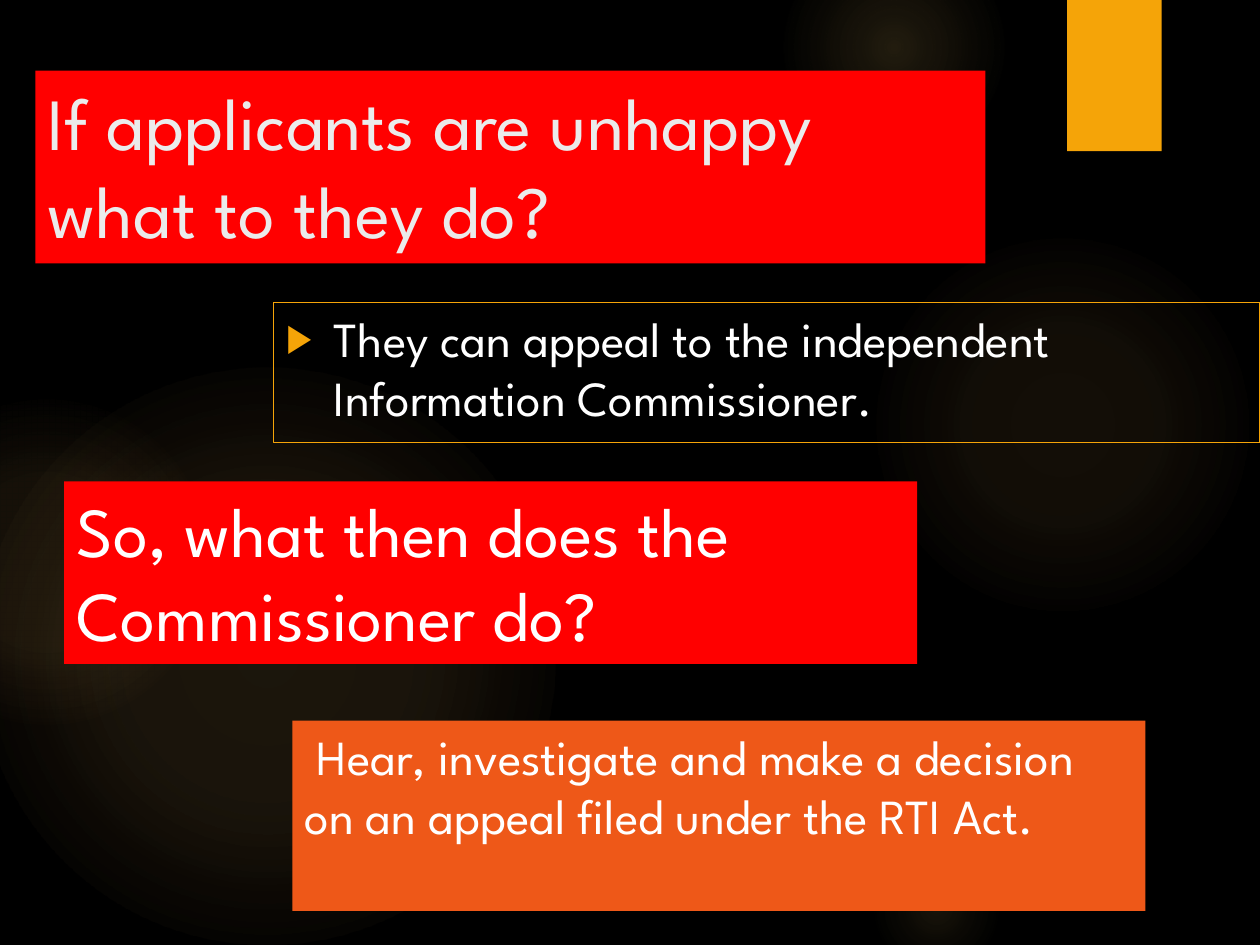
from lxml.etree import SubElement
from pptx import Presentation
from pptx.dml.color import RGBColor
from pptx.enum.shapes import MSO_SHAPE
from pptx.enum.text import MSO_ANCHOR, MSO_AUTO_SIZE, PP_ALIGN
from pptx.oxml import parse_xml
from pptx.oxml.ns import nsdecls, qn
from pptx.util import Inches, Pt

FONT = "League Spartan"
COLORS = {
    "background": "000000",
    "glow": "FAC96A",
    "accent": "F5A408",
    "question": "FF0000",
    "answer": "EE5818",
    "title": "EBEBEB",
    "text": "FFFFFF",
}

# Left, top, diameter in inches, then (position, opacity) stops in percent
GLOWS = [
    (6.89, 1.83, 3.08, [(0, 7), (36, 6), (69, 0)]),
    (6.22, -0.5, 1.75, [(0, 14), (36, 7), (73, 0)]),
    (6.89, 6.67, 1.08, [(0, 10), (31, 5), (66, 0)]),
    (-0.17, 2.92, 4.58, [(0, 11), (36, 10), (75, 0)]),
    (-0.92, 3.17, 2.58, [(0, 8), (36, 8), (72, 0)]),
]


def color(name):
    return RGBColor.from_string(COLORS[name])


def place(shape, box):
    shape.left, shape.top, shape.width, shape.height = map(Inches, box)


def add_plain_shape(slide, kind, box):
    shape = slide.shapes.add_shape(kind, *map(Inches, box))
    shape.shadow.inherit = False
    shape.line.fill.background()
    return shape


def fill_solid(shape, name):
    shape.fill.solid()
    shape.fill.fore_color.rgb = color(name)


def add_glow(slide, box, stops):
    """Add a circle whose light fades out from its centre."""
    glow = add_plain_shape(slide, MSO_SHAPE.OVAL, box)
    stop_xml = "".join(
        f'<a:gs pos="{position * 1000}"><a:srgbClr val="{COLORS["glow"]}">'
        f'<a:alpha val="{opacity * 1000}"/></a:srgbClr></a:gs>'
        for position, opacity in stops
    )
    gradient = parse_xml(
        f'<a:gradFill {nsdecls("a")} rotWithShape="1"><a:gsLst>{stop_xml}</a:gsLst>'
        '<a:path path="circle"><a:fillToRect l="50000" t="50000" r="50000" b="50000"/>'
        "</a:path></a:gradFill>"
    )
    glow._element.spPr.find(qn("a:prstGeom")).addnext(gradient)


def add_backdrop(slide):
    slide.background.fill.solid()
    slide.background.fill.fore_color.rgb = color("background")
    for left, top, diameter, stops in GLOWS:
        add_glow(slide, (left, top, diameter, diameter), stops)
    tab = add_plain_shape(slide, MSO_SHAPE.RECTANGLE, (8.47, 0, 0.75, 1.2))
    fill_solid(tab, "accent")


def write_text(shape, text, size, color_name="text"):
    frame = shape.text_frame
    frame.word_wrap = True
    frame.auto_size = MSO_AUTO_SIZE.NONE
    frame.vertical_anchor = MSO_ANCHOR.TOP
    paragraph = frame.paragraphs[0]
    paragraph.alignment = PP_ALIGN.LEFT
    run = paragraph.add_run()
    run.text = text
    run.font.name = FONT
    run.font.size = Pt(size)
    run.font.color.rgb = color(color_name)
    return paragraph


def set_bullet(paragraph, indent):
    paragraph.space_before = Pt(10)
    properties = paragraph._p.get_or_add_pPr()
    properties.set("marL", str(Inches(indent)))
    properties.set("indent", str(-Inches(indent)))
    bullet_color = SubElement(properties, qn("a:buClr"))
    SubElement(bullet_color, qn("a:srgbClr"), val=COLORS["accent"])
    SubElement(properties, qn("a:buSzPct"), val="80000")
    SubElement(properties, qn("a:buChar"), char="▶")


def fill_title(slide, box, text):
    title = slide.shapes.title
    place(title, box)
    fill_solid(title, "question")
    write_text(title, text, 42, "title")


def fill_body(slide, box, text):
    body = slide.placeholders[1]
    place(body, box)
    body.line.color.rgb = color("accent")
    body.line.width = Pt(0.75)
    set_bullet(write_text(body, text, 28), 0.38)


def add_panel(slide, box, text, size, fill_name):
    panel = slide.shapes.add_textbox(*map(Inches, box))
    fill_solid(panel, fill_name)
    write_text(panel, text, size)


def bring_to_front(slide, shape):
    slide.shapes._spTree.append(shape._element)


def main():
    presentation = Presentation()
    presentation.slide_width = Inches(10)
    presentation.slide_height = Inches(7.5)
    slide = presentation.slides.add_slide(presentation.slide_layouts[1])

    add_backdrop(slide)
    for placeholder in list(slide.placeholders):
        bring_to_front(slide, placeholder)
    fill_title(slide, (0.28, 0.56, 7.54, 1.53),
               "If applicants are unhappy what to they do?")
    fill_body(slide, (2.17, 2.4, 7.83, 1.11),
              "They can appeal to the independent Information Commissioner.")
    add_panel(slide, (0.51, 3.82, 6.77, 1.45),
              "So, what then does the Commissioner do?", 40, "question")
    add_panel(slide, (2.32, 5.72, 6.77, 1.51),
              " Hear, investigate and make a decision on an appeal filed under the RTI Act.",
              28, "answer")
    presentation.save("out.pptx")


if __name__ == "__main__":
    main()
